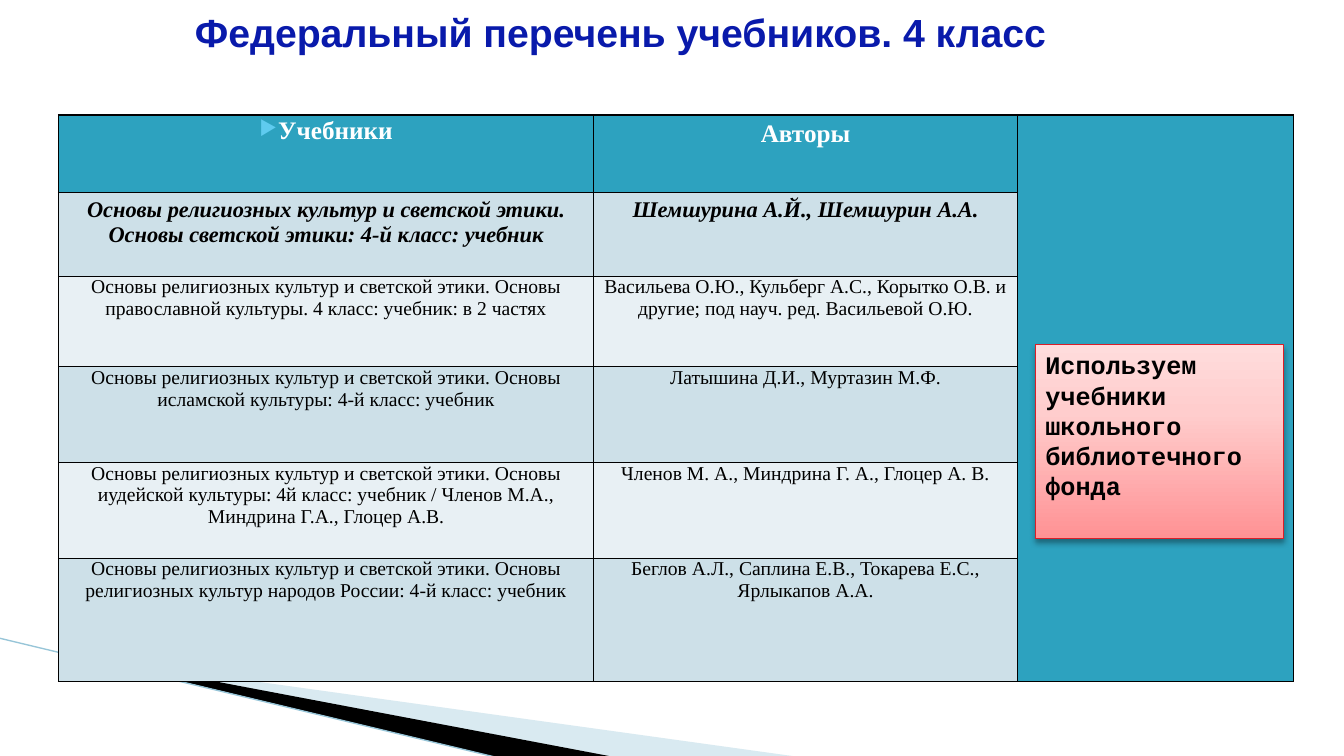
from lxml import etree
from pptx import Presentation
from pptx.dml.color import RGBColor
from pptx.enum.shapes import MSO_CONNECTOR, MSO_SHAPE
from pptx.enum.text import MSO_ANCHOR, PP_ALIGN
from pptx.oxml.ns import qn
from pptx.util import Inches, Pt

STRAIGHT, RECTANGLE = MSO_CONNECTOR.STRAIGHT, MSO_SHAPE.RECTANGLE
TOP, LEFT, CENTER = MSO_ANCHOR.TOP, PP_ALIGN.LEFT, PP_ALIGN.CENTER

BLACK = RGBColor(0, 0, 0)
WHITE = RGBColor(0xFF, 0xFF, 0xFF)
NAVY = RGBColor(0x09, 0x1A, 0xAB)
TEAL = RGBColor(0x2D, 0xA2, 0xBF)
SKY = RGBColor(0x5F, 0xCB, 0xEF)
WEDGE = RGBColor(0xA0, 0xCB, 0xDC)
EDGE = RGBColor(0x97, 0xC5, 0xD8)
BAND_DARK = RGBColor(0xCD, 0xE0, 0xE8)
BAND_LIGHT = RGBColor(0xE8, 0xF0, 0xF4)
RED = RGBColor(0xDA, 0x1F, 0x28)
PINK = RGBColor(0xFF, 0x92, 0x94)
PINK_MID = RGBColor(0xFF, 0xCD, 0xCD)
PINK_PALE = RGBColor(0xFF, 0xDC, 0xDC)

COLUMNS, ROWS = 133.3, 75

COURSE = "Основы религиозных культур и светской этики. "
TEXTBOOKS = [
    ("Учебники", "Авторы"),
    (COURSE + "Основы светской этики: 4-й класс: учебник",
     "Шемшурина А.Й., Шемшурин А.А."),
    (COURSE + "Основы православной культуры. 4 класс: учебник: в 2 частях",
     "Васильева О.Ю., Кульберг А.С., Корытко О.В. и другие; "
     "под науч. ред. Васильевой О.Ю."),
    (COURSE + "Основы исламской культуры: 4-й класс: учебник",
     "Латышина Д.И., Муртазин М.Ф."),
    (COURSE + "Основы иудейской культуры: 4й класс: учебник / "
     "Членов М.А., Миндрина Г.А., Глоцер А.В.",
     "Членов М. А., Миндрина Г. А., Глоцер А. В."),
    (COURSE + "Основы религиозных культур народов России: 4-й класс: учебник",
     "Беглов А.Л., Саплина Е.В., Токарева Е.С., Ярлыкапов А.А."),
]


def add_alpha(clr, percent):
    etree.SubElement(clr, qn("a:alpha"), val=str(percent * 1000))


def add_color(parent, color):
    return etree.SubElement(parent, qn("a:srgbClr"), val=str(color))


class SlideBuilder:
    """Draws on one slide; lengths are columns and rows of its grid."""

    def __init__(self, prs):
        self.slide = prs.slides.add_slide(prs.slide_layouts[6])
        self.shapes = self.slide.shapes
        self.col = prs.slide_width / COLUMNS
        self.row = prs.slide_height / ROWS

    def x(self, columns):
        return round(columns * self.col)

    def y(self, rows):
        return round(rows * self.row)

    def box(self, left, top, width, height):
        return self.x(left), self.y(top), self.x(width), self.y(height)

    def add_text(self, p, text, size, font, color, bold=True, italic=False, align=CENTER):
        p.alignment = align
        r = p.add_run()
        r.text = text
        r.font.size, r.font.name = Pt(size), font
        r.font.bold, r.font.italic = bold, italic
        r.font.color.rgb = color

    def polygon(self, points, color, alpha=100):
        start, *rest = [(self.x(c), self.y(r)) for c, r in points]
        builder = self.shapes.build_freeform(*start)
        builder.add_line_segments(rest, close=True)
        sp = builder.convert_to_shape()
        sp.shadow.inherit = False
        sp.line.fill.background()
        sp.fill.solid()
        sp.fill.fore_color.rgb = color
        add_alpha(sp._element.spPr.find(qn("a:solidFill"))[0], alpha)

    def line(self, x1, y1, x2, y2, color, width):
        cx = self.shapes.add_connector(
            STRAIGHT, self.x(x1), self.y(y1), self.x(x2), self.y(y2))
        cx.line.color.rgb, cx.line.width = color, Pt(width)
        etree.SubElement(cx._element.spPr, qn("a:effectLst"))

    def title(self, text, *box):
        tf = self.shapes.add_textbox(*self.box(*box)).text_frame
        tf.word_wrap = True
        p = tf.paragraphs[0]
        p.line_spacing = 0.9
        self.add_text(p, text, 28, "Arial", NAVY)

    def note(self, text, *box):
        """Red gradient card with a soft shadow."""
        sp = self.shapes.add_shape(RECTANGLE, *self.box(*box))
        sp.line.color.rgb, sp.line.width = RED, Pt(0.75)
        sp.fill.gradient()
        sp.fill.gradient_angle = 90
        stops = sp._element.spPr.find(".//" + qn("a:gsLst"))
        stops.clear()
        for share, color in ((0, PINK), (65, PINK_MID), (100, PINK_PALE)):
            add_color(etree.SubElement(stops, qn("a:gs"), pos=str(share * 1000)), color)
        sp.shadow.inherit = False
        shadow = etree.SubElement(
            sp._element.spPr.find(qn("a:effectLst")), qn("a:outerShdw"),
            blurRad=str(Pt(4)), dist=str(Pt(3)), dir="5400000", rotWithShape="0")
        add_alpha(add_color(shadow, BLACK), 35)
        tf = sp.text_frame
        tf.word_wrap, tf.vertical_anchor = True, TOP
        self.add_text(tf.paragraphs[0], text, 18, "Courier New", BLACK, align=LEFT)

    def style_cell(self, cell, fill, side, end):
        cell.margin_left = cell.margin_right = Inches(side)
        cell.margin_top = cell.margin_bottom = Inches(end)
        tc_pr = cell._tc.get_or_add_tcPr()
        for edge in ("lnL", "lnR", "lnT", "lnB"):
            ln = etree.SubElement(tc_pr, qn("a:" + edge), w=str(Pt(1)))
            add_color(etree.SubElement(ln, qn("a:solidFill")), BLACK)
        cell.fill.solid()
        cell.fill.fore_color.rgb = fill

    def bullet(self, p):
        p_pr = p._p.get_or_add_pPr()
        p_pr.set("marL", "0")
        p_pr.set("indent", "0")
        add_color(etree.SubElement(p_pr, qn("a:buClr")), SKY)
        etree.SubElement(p_pr, qn("a:buSzPct"), val="80000")
        etree.SubElement(p_pr, qn("a:buChar"), char="▶")

    def table(self, records, left, top, widths, heights):
        table = self.shapes.add_table(
            len(heights), len(widths),
            *self.box(left, top, sum(widths), sum(heights))).table
        for column, width in zip(table.columns, widths):
            column.width = self.x(width)
        for row, height in zip(table.rows, heights):
            row.height = self.y(height)
        for i, record in enumerate(records):
            band = TEAL if i == 0 else BAND_DARK if i % 2 else BAND_LIGHT
            size = (18, 16)[i] if i < 2 else 14
            margins = (0.13, 0.05) if i < 2 else (0.04, 0)
            for j, text in enumerate(record):
                cell = table.cell(i, j)
                self.style_cell(cell, band, *margins)
                self.add_text(cell.text_frame.paragraphs[0], text, size, "Times New Roman",
                              BLACK if i else WHITE, bold=i < 2, italic=i == 1)
            self.style_cell(table.cell(i, len(record)), TEAL, *margins)
        last = len(widths) - 1
        table.cell(0, last).merge(table.cell(len(heights) - 1, last))
        heading = table.cell(0, 0).text_frame.paragraphs[0]
        self.bullet(heading)
        heading.line_spacing = 0.87


def main():
    prs = Presentation()
    prs.slide_width, prs.slide_height = Inches(13.33), Inches(7.5)
    s = SlideBuilder(prs)
    s.polygon([(7.3, 65.1), (79.3, 75.1), (60.8, 75.1), (7.3, 65)], WEDGE, 40)
    s.polygon([(7.1, 64.9), (60.9, 75.1), (49.6, 75.2), (7.2, 65)], BLACK)
    s.line(-0.1, 63.3, 49.5, 75.2, EDGE, 0.95)
    s.table(TEXTBOOKS, 5.8, 11.4, (53.1, 42, 27.4), (7.7, 8.3, 9, 9.5, 9.5, 12.2))
    s.title("Федеральный перечень учебников. 4 класс", 8.2, 0.9, 106.7, 6)
    s.note("Используем учебники школьного библиотечного фонда", 102.7, 34.2, 24.6, 19.2)
    prs.save("out.pptx")


if __name__ == "__main__":
    main()
